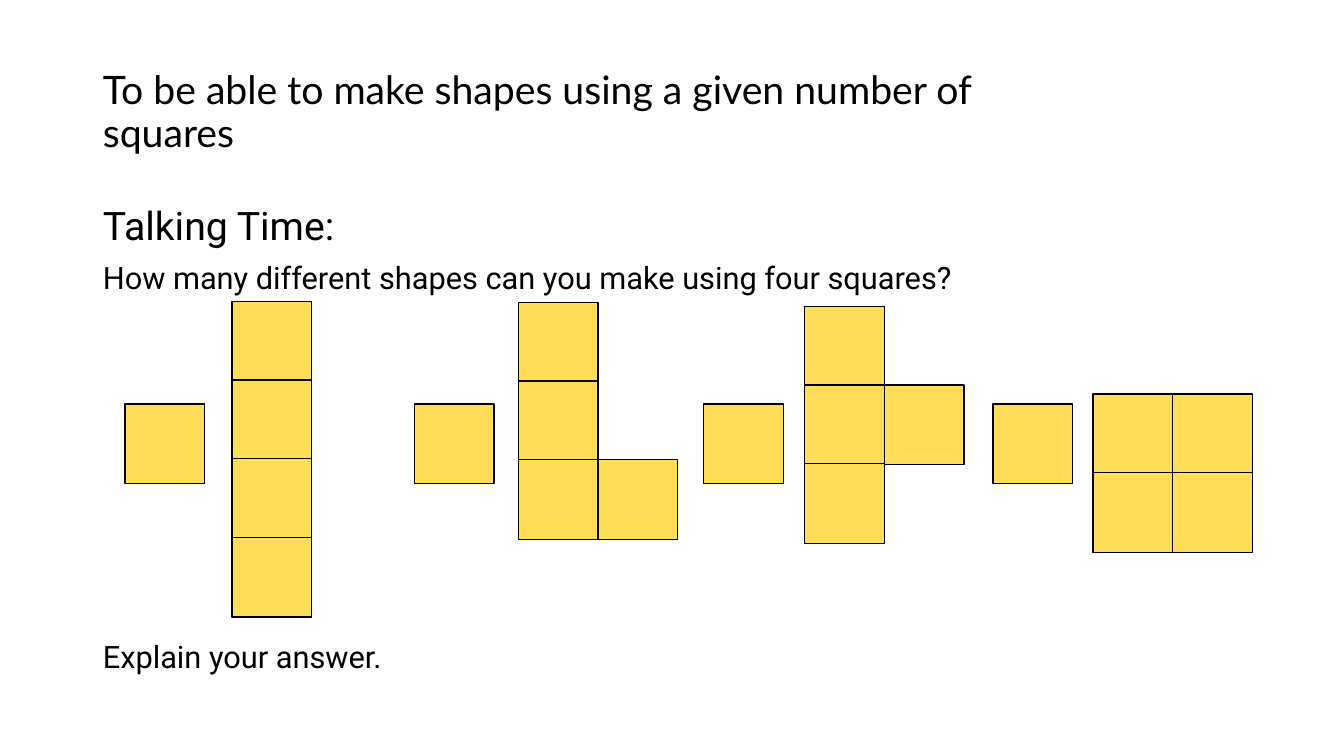
from dataclasses import dataclass

from lxml.etree import SubElement
from pptx import Presentation
from pptx.dml.color import RGBColor as Rgb
from pptx.enum.shapes import MSO_SHAPE as Kind
from pptx.enum.text import MSO_ANCHOR as Anchor, MSO_AUTO_SIZE as Fit, PP_ALIGN as Align
from pptx.oxml.ns import qn
from pptx.util import Inches, Pt

HUES = {"ink": "000000", "tile": "FFDD57"}
SIDE, ROW = 0.79, 0.78
FIRST, STEP, MID = 1.24, 2.87, 4.01


@dataclass
class Line:
    words: str
    size: int
    font: str = "Roboto"
    gap: int = 0


@dataclass
class Form:
    left: float
    top: float
    cells: list[tuple[int, int]]


TITLE = [Line("To be able to make shapes using a given number of squares", 28, "Lato")]
BODY = [
    Line("Talking Time:", 28),
    Line("How many different shapes can you make using four squares?", 22, gap=10),
    Line("Explain your answer.", 22, gap=247),
]
FORMS = [
    Form(2.3, 2.99, [(0, 0), (0, 1), (0, 2), (0, 3)]),
    Form(5.14, 3, [(0, 0), (0, 1), (0, 2), (1, 2)]),
    Form(7.98, 3.04, [(0, 0), (0, 1), (0, 2), (1, 1)]),
    Form(10.84, 3.91, [(0, 0), (1, 0), (0, 1), (1, 1)]),
]
FORMS += [Form(FIRST + i * STEP, MID, [(0, 0)]) for i in range(4)]


def write(holder, box: tuple, lines: list[Line], anchor: Anchor) -> None:
    """Place a placeholder and fill it with plain, unbulleted lines."""
    holder.left, holder.top, holder.width, holder.height = map(Inches, box)
    frame = holder.text_frame
    frame.word_wrap = True
    frame.auto_size = Fit.NONE
    frame.vertical_anchor = anchor
    for i, line in enumerate(lines):
        para = frame.add_paragraph() if i else frame.paragraphs[0]
        props = para._p.get_or_add_pPr()
        props.set("marL", "0")
        props.set("indent", "0")
        SubElement(props, qn("a:buNone"))
        para.alignment = Align.LEFT
        para.line_spacing = 0.9
        para.space_before = Pt(line.gap)
        run = para.add_run()
        run.text = line.words
        run.font.name = line.font
        run.font.size = Pt(line.size)
        run.font.color.rgb = Rgb.from_string(HUES["ink"])


def draw(shapes, form: Form) -> None:
    """Draw every square of a form on its grid."""
    for col, row in form.cells:
        left, top = form.left + col * SIDE, form.top + row * ROW
        tile = shapes.add_shape(Kind.RECTANGLE, *map(Inches, (left, top, SIDE, SIDE)))
        tile.shadow.inherit = False
        tile.fill.solid()
        tile.fill.fore_color.rgb = Rgb.from_string(HUES["tile"])
        tile.line.color.rgb = Rgb.from_string(HUES["ink"])
        tile.line.width = Pt(1)


def main() -> None:
    """Build the slide and save it."""
    deck = Presentation()
    deck.slide_width, deck.slide_height = Inches(13.33), Inches(7.5)
    slide = deck.slides.add_slide(deck.slide_layouts[1])
    write(slide.shapes.title, (0.92, 0.4, 9.6, 1.45), TITLE, Anchor.MIDDLE)
    write(slide.placeholders[1], (0.92, 2, 11.5, 4.76), BODY, Anchor.TOP)
    for form in FORMS:
        draw(slide.shapes, form)
    deck.save("out.pptx")


if __name__ == "__main__":
    main()
